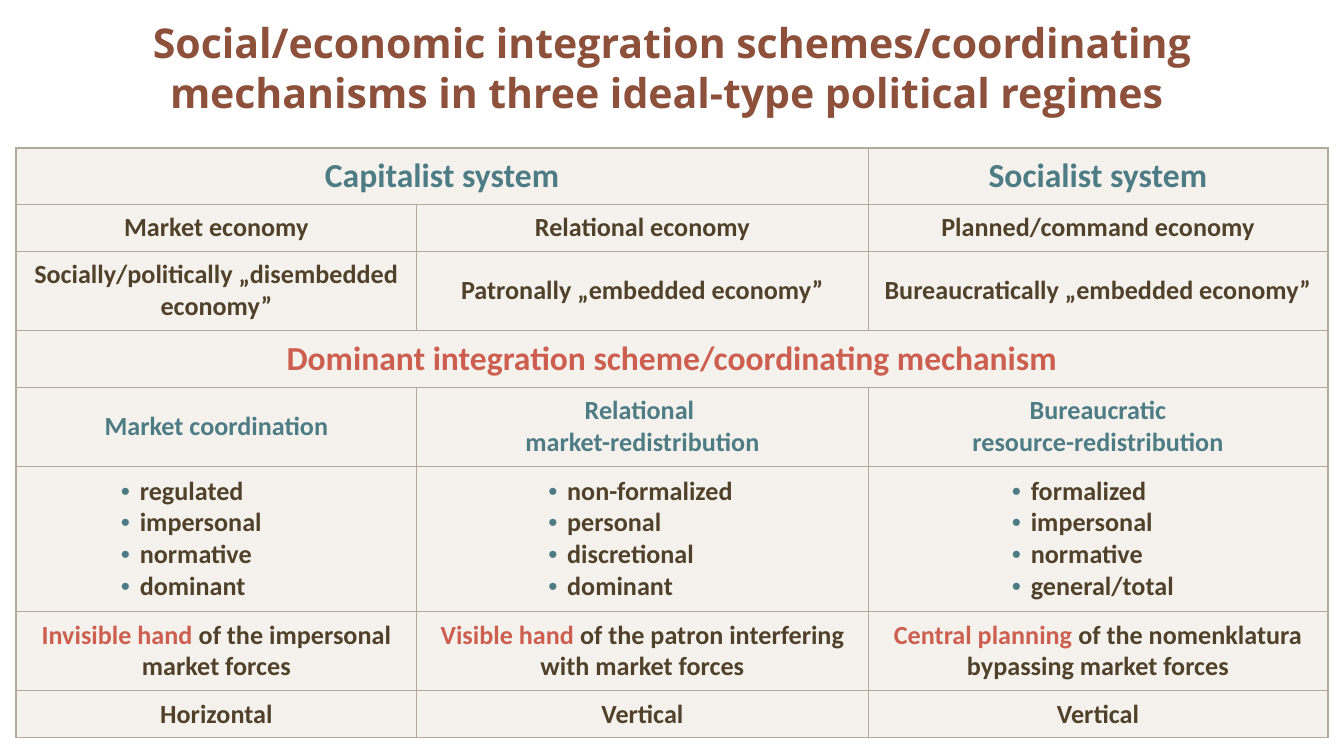
from lxml.etree import SubElement
from pptx import Presentation
from pptx.dml.color import RGBColor
from pptx.enum.text import MSO_ANCHOR, MSO_AUTO_SIZE, PP_ALIGN
from pptx.oxml import parse_xml
from pptx.oxml.ns import nsdecls, qn
from pptx.util import Inches, Pt

COLORS = {
    "title": "8D503B",
    "teal": "4D7C85",
    "red": "CD5F50",
    "text": "50412B",
    "cell": "EFEAE4",
    "border": "B3A99D",
}
COLUMN_WIDTHS = [2.98, 3.36, 3.42]
ROW_HEIGHTS = [0.42, 0.35, 0.59, 0.42, 0.59, 1.08, 0.59, 0.35]
BULLET_ROW = 5
BULLET_MARGINS = [0.82, 1.02, 1.11]
BULLET_HANGING = 0.14

# Each row: text size, colour, cell texts (None continues a merged cell)
ROWS = [
    (18, "teal", ["Capitalist system", None, "Socialist system"]),
    (14, "text", ["Market economy", "Relational economy", "Planned/command economy"]),
    (14, "text", ["Socially/politically „disembedded economy”",
                  "Patronally „embedded economy”",
                  "Bureaucratically „embedded economy”"]),
    (18, "red", ["Dominant integration scheme/coordinating mechanism", None, None]),
    (14, "teal", ["Market coordination",
                  "Relational \nmarket-redistribution",
                  "Bureaucratic\nresource-redistribution"]),
    (14, "text", ["regulated\nimpersonal\nnormative\ndominant",
                  "non-formalized\npersonal\ndiscretional\ndominant",
                  "formalized\nimpersonal\nnormative\ngeneral/total"]),
    (14, "text", ["Invisible hand of the impersonal market forces",
                  "Visible hand of the patron interfering with market forces",
                  "Central planning of the nomenklatura bypassing market forces"]),
    (14, "text", ["Horizontal", "Vertical", "Vertical"]),
]
RED_LEADS = ["Invisible hand ", "Visible hand ", "Central planning "]


def format_run(run, font_name, size, color):
    run.font.name = font_name
    run.font.size = Pt(size)
    run.font.bold = True
    run.font.color.rgb = RGBColor.from_string(COLORS[color])


def set_borders(cell, widths):
    properties = cell._tc.get_or_add_tcPr()
    for position, (side, width) in enumerate(widths.items()):
        line = parse_xml(
            f'<a:ln{side} {nsdecls("a")} w="{Pt(width)}"><a:solidFill>'
            f'<a:srgbClr val="{COLORS["border"]}"/></a:solidFill></a:ln{side}>'
        )
        properties.insert(position, line)


# Widescreen slide, 16:9
presentation = Presentation()
presentation.slide_width = Inches(10)
presentation.slide_height = Inches(10 * 9 / 16)
slide = presentation.slides.add_slide(presentation.slide_layouts[5])

# Title
title = slide.shapes.title
title.left, title.top = Inches(0.12), Inches(0)
title.width, title.height = Inches(9.76), Inches(1)
title_frame = title.text_frame
title_frame.text = ("Social/economic integration schemes/coordinating "
                    "mechanisms in three ideal-type political regimes ")
title_frame.word_wrap = True
title_frame.auto_size = MSO_AUTO_SIZE.NONE
title_frame.vertical_anchor = MSO_ANCHOR.MIDDLE
title_paragraph = title_frame.paragraphs[0]
title_paragraph.alignment = PP_ALIGN.CENTER
title_paragraph.line_spacing = 1.0
format_run(title_paragraph.runs[0], "Open Sans", 22, "title")

# Table grid
table = slide.shapes.add_table(
    len(ROWS), len(COLUMN_WIDTHS), Inches(0.12), Inches(1.1),
    Inches(sum(COLUMN_WIDTHS)), Inches(sum(ROW_HEIGHTS)),
).table
table.first_row = False
table.horz_banding = False
for column, width in zip(table.columns, COLUMN_WIDTHS):
    column.width = Inches(width)
for row, height in zip(table.rows, ROW_HEIGHTS):
    row.height = Inches(height)
table.cell(0, 0).merge(table.cell(0, 1))
table.cell(3, 0).merge(table.cell(3, 2))

# Cells
last_row, last_column = len(ROWS) - 1, len(COLUMN_WIDTHS) - 1
for row_index, (size, color, texts) in enumerate(ROWS):
    for column_index, text in enumerate(texts):
        if text is None:
            continue
        cell = table.cell(row_index, column_index)
        cell.vertical_anchor = MSO_ANCHOR.MIDDLE

        # Translucent fill, with a thicker line around the whole table
        cell.fill.solid()
        cell.fill.fore_color.rgb = RGBColor.from_string(COLORS["cell"])
        fill_color = cell._tc.tcPr.find(qn("a:solidFill")).find(qn("a:srgbClr"))
        SubElement(fill_color, qn("a:alpha"), val="60000")
        right_column = column_index + cell.span_width - 1
        set_borders(cell, {
            "L": 1 if column_index == 0 else 0.5,
            "R": 1 if right_column == last_column else 0.5,
            "T": 1 if row_index == 0 else 0.5,
            "B": 1 if row_index == last_row else 0.5,
        })

        # Text, with a red lead where the cell has one
        lead = next((lead for lead in RED_LEADS if text.startswith(lead)), "")
        cell.text_frame.text = lead or text
        if lead:
            cell.text_frame.paragraphs[0].add_run().text = text[len(lead):]
        for paragraph in cell.text_frame.paragraphs:
            if row_index == BULLET_ROW:
                paragraph.alignment = PP_ALIGN.LEFT
                properties = paragraph._p.get_or_add_pPr()
                properties.set("marL", str(Inches(BULLET_MARGINS[column_index])))
                properties.set("indent", str(-Inches(BULLET_HANGING)))
                bullet_color = SubElement(properties, qn("a:buClr"))
                SubElement(bullet_color, qn("a:srgbClr"), val=COLORS["teal"])
                SubElement(properties, qn("a:buFont"), typeface="Arial")
                SubElement(properties, qn("a:buChar"), char="•")
            else:
                paragraph.alignment = PP_ALIGN.CENTER
            for run in paragraph.runs:
                format_run(run, "Calibri", size, "red" if run.text == lead else color)

presentation.save("out.pptx")
